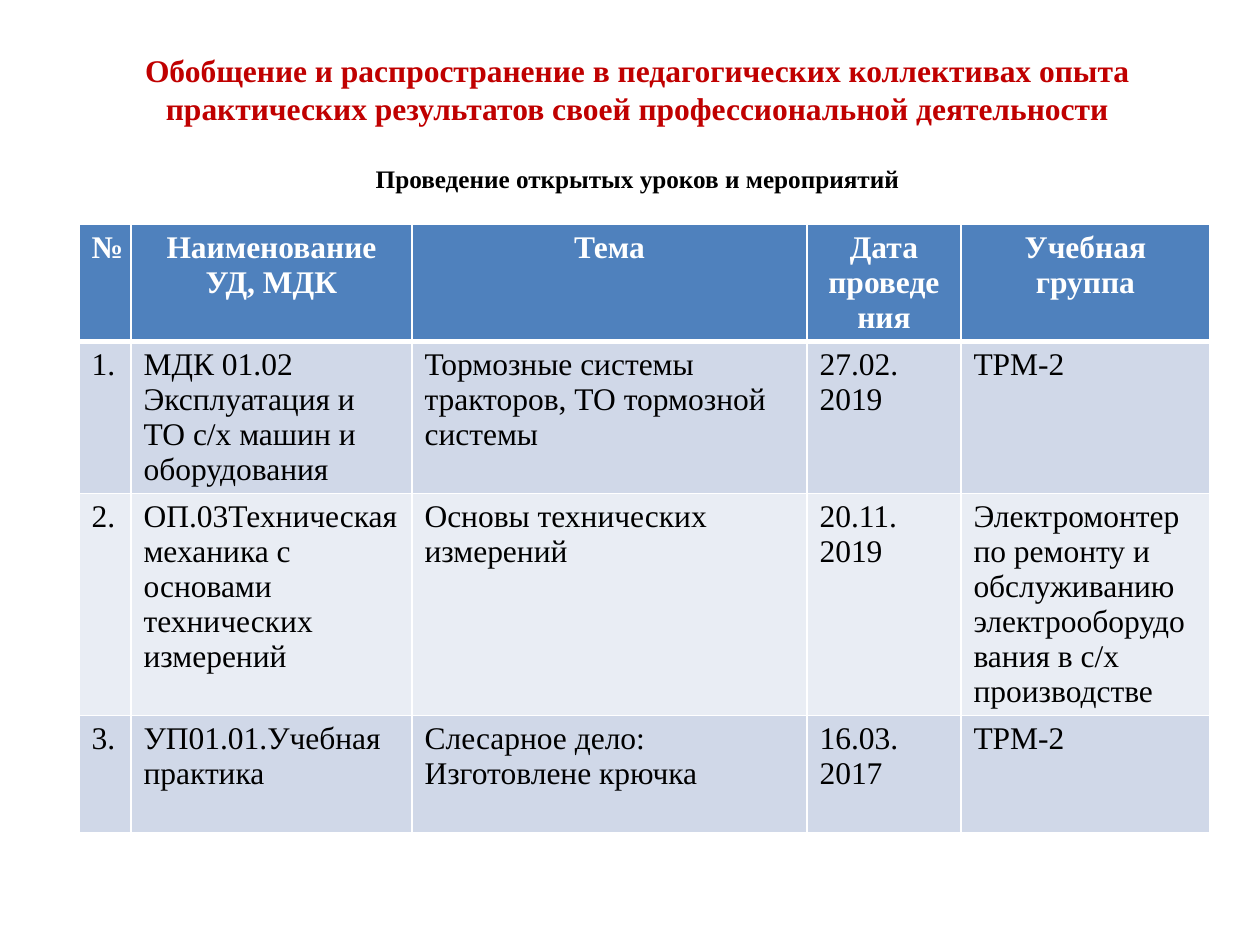
"""Builds a slide with a heading and a table of open lessons."""
from lxml.etree import SubElement
from pptx import Presentation
from pptx.dml.color import RGBColor
from pptx.enum.text import MSO_ANCHOR, MSO_AUTO_SIZE, PP_ALIGN
from pptx.oxml.ns import qn
from pptx.util import Emu, Pt

FONT = "Times New Roman"
RED = RGBColor(0xC0, 0x00, 0x00)
BLACK = RGBColor(0x00, 0x00, 0x00)
WHITE = RGBColor(0xFF, 0xFF, 0xFF)
BLUE = RGBColor(0x4F, 0x81, 0xBD)
BANDS = [RGBColor(0xE9, 0xED, 0xF4), RGBColor(0xD0, 0xD8, 0xE8)]

HEADS = [
    ("Обобщение и распространение в педагогических коллективах опыта "
     "практических результатов своей профессиональной деятельности", 18, RED, 0),
    ("Проведение открытых уроков и мероприятий", 14.4, BLACK, 21),
]
ROWS = [
    ["№", "Наименование УД, МДК", "Тема", "Дата проведения", "Учебная группа"],
    ["1.", "МДК 01.02 Эксплуатация и ТО с/х машин и оборудования",
     "Тормозные системы тракторов, ТО тормозной системы",
     "27.02.\n2019", "ТРМ-2"],
    ["2.", "ОП.03Техническая механика с основами технических измерений",
     "Основы технических измерений", "20.11.\n2019",
     "Электромонтер по ремонту и обслуживанию электрооборудования "
     "в с/х производстве"],
    ["3.", "УП01.01.Учебная практика", "Слесарное дело: Изготовлене крючка",
     "16.03. 2017", "ТРМ-2"],
]
WIDTHS = [52, 281, 395, 154, 249]
HEIGHTS = [117, 152, 222, 117]


def px(n):
    return Emu(round(n * 914400 / 126))


def write(para, text, size, color, bold):
    run = para.add_run()
    run.text = text
    font = run.font
    font.name, font.size, font.bold = FONT, Pt(size), bold
    font.color.rgb = color


def edge(cell, side, width):
    line = SubElement(cell._tc.get_or_add_tcPr(), qn(f"a:{side}"), w=str(Pt(width)))
    fill = SubElement(line, qn("a:solidFill"))
    SubElement(fill, qn("a:srgbClr"), val=str(WHITE))


def add_title(slide):
    title = slide.shapes.title
    title.left, title.top, title.width, title.height = map(px, (78, 38, 1119, 169))
    frame = title.text_frame
    frame.auto_size = MSO_AUTO_SIZE.NONE
    frame.word_wrap = True
    frame.vertical_anchor = MSO_ANCHOR.MIDDLE
    for i, (text, size, color, gap) in enumerate(HEADS):
        para = frame.add_paragraph() if i else frame.paragraphs[0]
        para.alignment = PP_ALIGN.CENTER
        para.space_before = Pt(gap)
        write(para, text, size, color, True)


def fill_cell(cell, text, row, col):
    head = row == 0
    for side in ("lnL", "lnR", "lnT", "lnB"):
        thick = (head and side == "lnB") or (row == 1 and side == "lnT")
        edge(cell, side, 3 if thick else 1)
    cell.fill.solid()
    cell.fill.fore_color.rgb = BLUE if head else BANDS[row % 2]
    frame = cell.text_frame
    for i, part in enumerate(text.split("\n")):
        para = frame.add_paragraph() if i else frame.paragraphs[0]
        para.alignment = PP_ALIGN.CENTER if head and col else PP_ALIGN.LEFT
        write(para, part, 18, WHITE if head else BLACK, head)


def add_grid(slide):
    table = slide.shapes.add_table(
        len(ROWS), len(WIDTHS), px(79), px(224),
        px(sum(WIDTHS)), px(sum(HEIGHTS))).table
    for col, width in zip(table.columns, WIDTHS):
        col.width = px(width)
    for r, (texts, height) in enumerate(zip(ROWS, HEIGHTS)):
        table.rows[r].height = px(height)
        for c, text in enumerate(texts):
            fill_cell(table.cell(r, c), text, r, c)


def main():
    deck = Presentation()
    deck.slide_width, deck.slide_height = px(1260), px(945)
    slide = deck.slides.add_slide(deck.slide_layouts[5])
    add_title(slide)
    add_grid(slide)
    deck.save("out.pptx")


if __name__ == "__main__":
    main()
